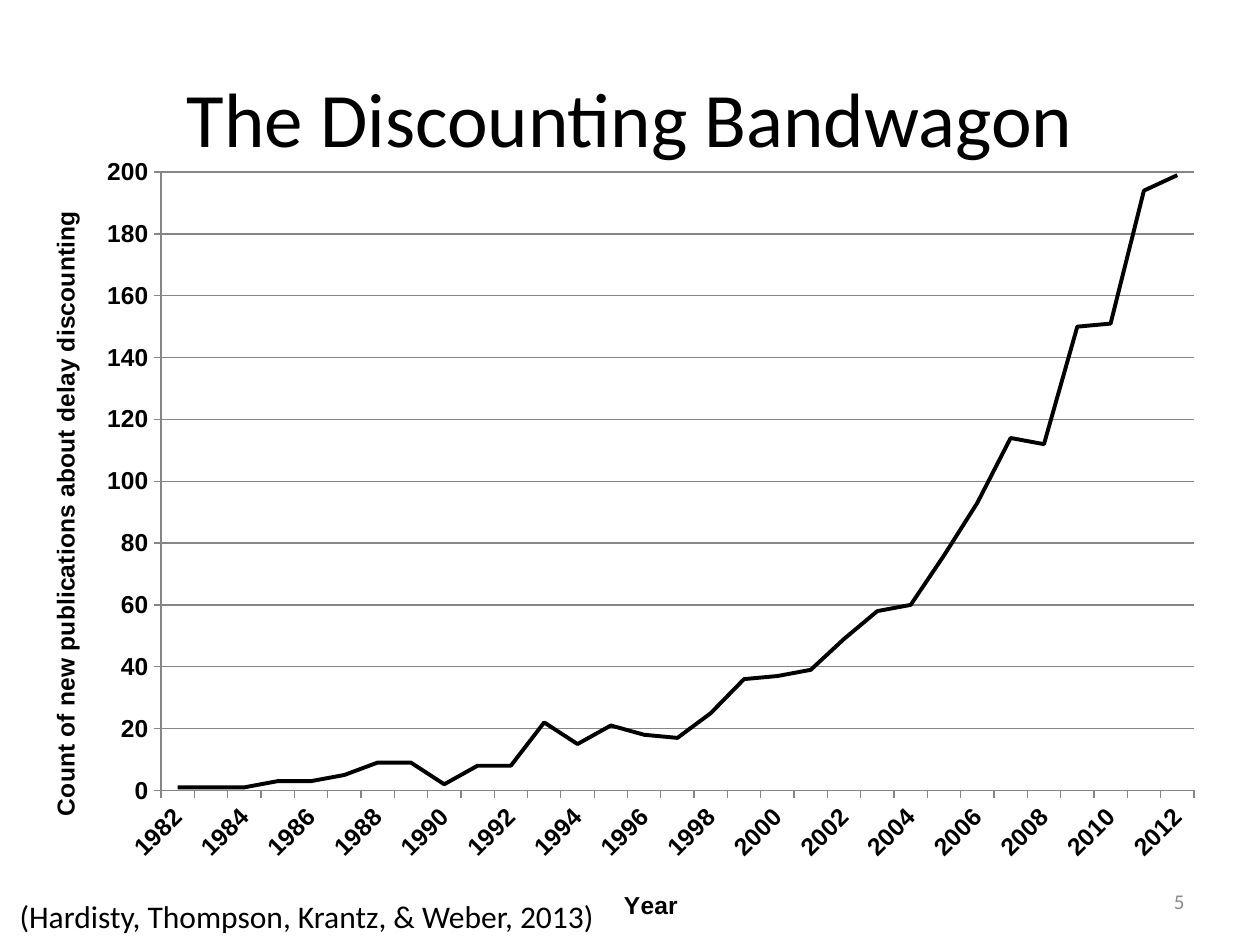
from dataclasses import dataclass

from pptx import Presentation
from pptx.chart.data import CategoryChartData
from pptx.dml.color import RGBColor as RGB
from pptx.enum.chart import XL_CHART_TYPE as Kind, XL_TICK_MARK as Tick
from pptx.enum.text import MSO_ANCHOR as Anchor, PP_ALIGN as Align
from pptx.oxml import parse_xml
from pptx.oxml.ns import nsdecls, qn
from pptx.util import Pt

START = 1982
COUNTS = [1, 1, 1, 3, 3, 5, 9, 9, 2, 8, 8, 22, 15, 21, 18, 17, 25, 36, 37, 39,
          49, 58, 60, 76, 93, 114, 112, 150, 151, 194, 199]


@dataclass(frozen=True)
class Theme:
    ink: RGB = RGB(0, 0, 0)
    gray: RGB = RGB(0x8C, 0x8C, 0x8C)
    rule: RGB = RGB(0x86, 0x86, 0x86)
    body: str = "Calibri"
    label: str = "Arial"
    title: int = 44
    cite: int = 18
    axis: int = 14
    page: int = 12


def place(node, **spots):
    """Fix a chart part at fractions of the chart: x, y and, if given, w, h."""
    old = node.find(qn("c:layout"))
    if old is not None:
        node.remove(old)
    modes = "".join(f'<c:{k}Mode val="edge"/>' for k in "xy")
    vals = "".join(f'<c:{k} val="{v}"/>' for k, v in spots.items())
    inner = '<c:layoutTarget val="inner"/>' if "w" in spots else ""
    node.insert(len(node.findall(qn("c:tx"))), parse_xml(
        f'<c:layout {nsdecls("c")}><c:manualLayout>{inner}{modes}{vals}'
        '</c:manualLayout></c:layout>'))


class Board:
    def __init__(self, slide, theme):
        self.slide, self.theme = slide, theme

    def style(self, font, size, face, color=None, bold=False):
        font.size, font.name, font.bold = Pt(size), face, bold
        font.color.rgb = color or self.theme.ink

    def text(self, words, box, size, align, color=None, wrap=True):
        frame = self.slide.shapes.add_textbox(*map(Pt, box)).text_frame
        frame.word_wrap = wrap
        frame.vertical_anchor = Anchor.MIDDLE
        para = frame.paragraphs[0]
        para.text, para.alignment = words, align
        self.style(para.font, size, self.theme.body, color)

    def axis(self, axis, words, x, y):
        look = self.theme
        axis.major_tick_mark, axis.minor_tick_mark = Tick.OUTSIDE, Tick.NONE
        line = axis.format.line
        line.color.rgb, line.width = look.rule, Pt(0.75)
        self.style(axis.tick_labels.font, look.axis, look.label, bold=True)
        title = axis.axis_title
        para = title.text_frame.paragraphs[0]
        para.text = words
        self.style(para.font, look.axis, look.label, bold=True)
        place(title.element, x=x, y=y)

    def chart(self, start, counts, box):
        look = self.theme
        data = CategoryChartData()
        data.categories = [str(start + i) for i in range(len(counts))]
        data.add_series("Series 1", counts)
        chart = self.slide.shapes.add_chart(
            Kind.LINE, *map(Pt, box), data).chart
        chart.has_legend = chart.has_title = False
        self.style(chart.font, 10, look.body)
        plot = chart.plots[0]
        plot.vary_by_categories = False
        line = plot.series[0]
        line.smooth = False
        line.format.line.color.rgb = look.ink
        line.format.line.width = Pt(2.25)

        years, tally = chart.category_axis, chart.value_axis
        self.axis(years, "Year", 0.5, 0.93)
        self.axis(tally, "Count of new publications about delay discounting",
                  0.02, 0.08)
        tally.minimum_scale, tally.maximum_scale = 0, 200
        tally.major_unit = 20
        grid = tally.major_gridlines.format.line
        grid.color.rgb, grid.width = look.rule, Pt(0.75)

        root = years._element
        root.find(qn("c:txPr")).find(qn("a:bodyPr")).set("rot", "-2700000")
        root.find(qn("c:noMultiLvlLbl")).addprevious(
            parse_xml(f'<c:tickLblSkip {nsdecls("c")} val="2"/>'))
        area = chart._chartSpace.chart.plotArea
        place(area, x=0.117, y=0.037, w=0.863, h=0.775)


def main():
    deck = Presentation()
    deck.slide_width, deck.slide_height = Pt(720), Pt(540)
    look = Theme()
    board = Board(deck.slides.add_slide(deck.slide_layouts[6]), look)
    board.text("The Discounting Bandwagon", (36, 21.6, 648, 90),
               look.title, Align.CENTER)
    board.text("5", (516, 500.5, 168, 28.75), look.page, Align.RIGHT, look.gray)
    board.chart(START, COUNTS, (12, 81.5, 684, 456))
    board.text("(Hardisty, Thompson, Krantz, & Weber, 2013)",
               (2, 509, 346.5, 29), look.cite, Align.CENTER, wrap=False)
    deck.save("out.pptx")


if __name__ == "__main__":
    main()
